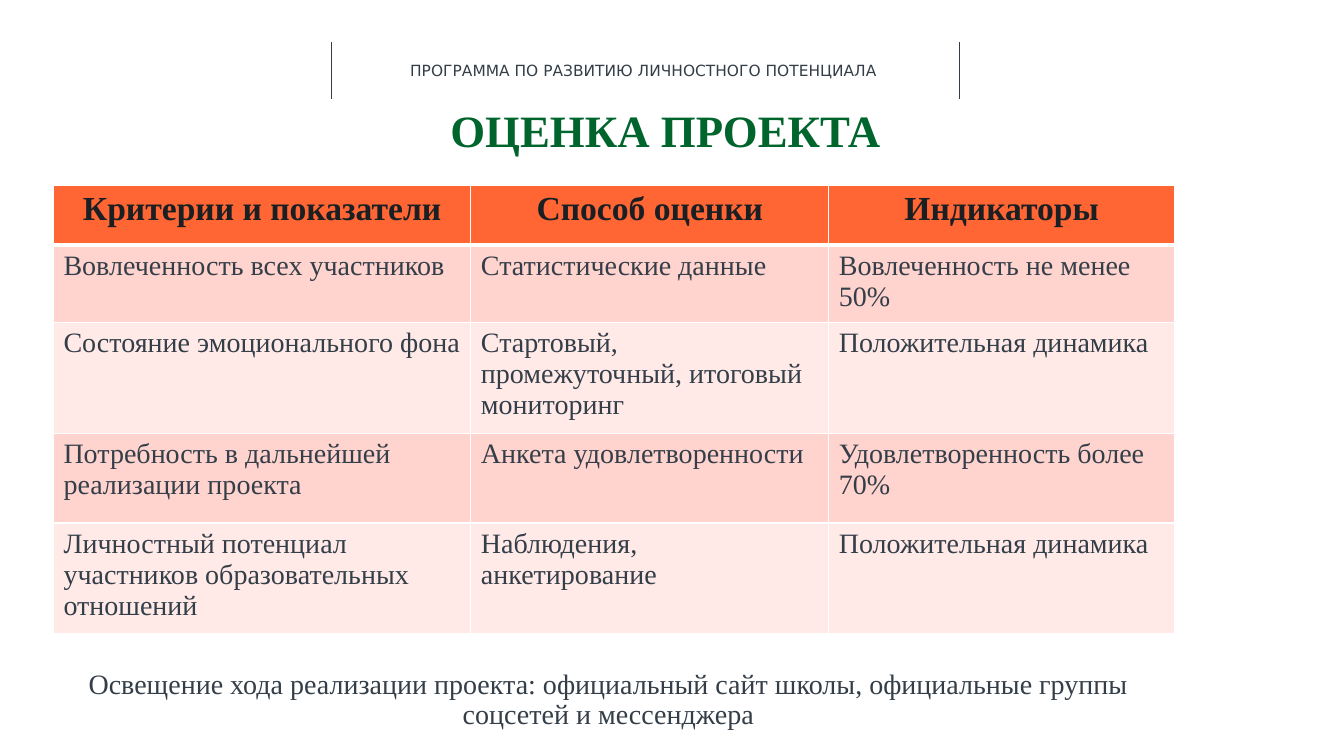
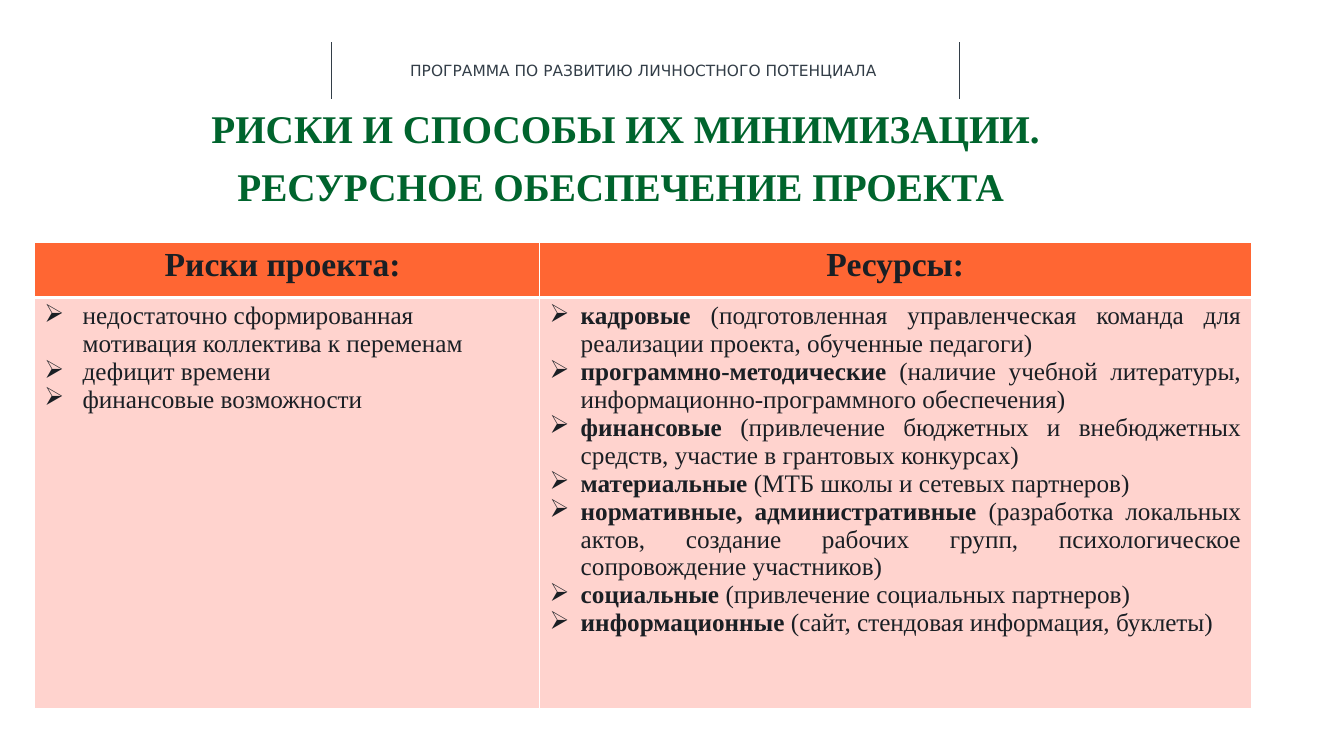
from dataclasses import dataclass
from lxml import etree
from pptx import Presentation
from pptx.dml.color import RGBColor
from pptx.enum.shapes import MSO_CONNECTOR
from pptx.enum.text import MSO_ANCHOR, MSO_AUTO_SIZE, PP_ALIGN
from pptx.oxml.ns import qn
from pptx.util import Inches, Pt

STRAIGHT = MSO_CONNECTOR.STRAIGHT
TOP = MSO_ANCHOR.TOP
NO_FIT = MSO_AUTO_SIZE.NONE
LEFT, CENTER, JUSTIFY = PP_ALIGN.LEFT, PP_ALIGN.CENTER, PP_ALIGN.JUSTIFY


@dataclass(frozen=True)
class Theme:
    font: str = "Times New Roman"
    band_font: str = "DejaVu Sans"
    green: str = "00642D"
    slate: str = "333E48"
    ink: str = "1A1F24"
    orange: str = "FF6633"
    rows: tuple = ("FFD3CE", "FFEAE8")
    white: str = "FFFFFF"
    band_size: int = 11
    head_size: int = 24
    body_size: int = 20
    list_size: int = 18


T = Theme()


def add_run(p, text, size, color, bold=False, font=T.font):
    r = p.add_run()
    r.text = text
    r.font.name, r.font.size, r.font.bold = font, Pt(size), bold
    r.font.color.rgb = RGBColor.from_string(color)


def style_cell(cell, fill, top, bottom):
    """Fill the cell and draw its white borders; widths are in points."""
    cell.fill.solid()
    cell.fill.fore_color.rgb = RGBColor.from_string(fill)
    tcPr = cell._tc.get_or_add_tcPr()
    for i, (side, width) in enumerate([("L", 1), ("R", 1), ("T", top), ("B", bottom)]):
        ln = etree.Element(qn(f"a:ln{side}"), w=str(Pt(width)))
        solid = etree.SubElement(ln, qn("a:solidFill"))
        etree.SubElement(solid, qn("a:srgbClr"), val=T.white)
        tcPr.insert(i, ln)


prs = Presentation()
prs.slide_width, prs.slide_height = Inches(13.33), Inches(7.5)
TITLE_AND_BODY, TITLE_ONLY = prs.slide_layouts[1], prs.slide_layouts[5]

# Content: a cell is a list of paragraphs, a paragraph a list of (text, bold)
criteria = [
    ("Вовлеченность всех участников", "Статистические данные",
     "Вовлеченность не менее 50%"),
    ("Состояние эмоционального фона", "Стартовый, промежуточный, итоговый мониторинг",
     "Положительная динамика"),
    ("Потребность в дальнейшей реализации проекта", "Анкета удовлетворенности",
     "Удовлетворенность более 70%"),
    ("Личностный потенциал участников образовательных отношений",
     "Наблюдения, анкетирование", "Положительная динамика"),
]
risks = [
    "недостаточно сформированная мотивация коллектива к переменам",
    "дефицит времени",
    "финансовые возможности",
]
resources = [
    ("кадровые", "(подготовленная управленческая команда для реализации проекта, "
     "обученные педагоги)"),
    ("программно-методические", "(наличие учебной литературы, "
     "информационно-программного обеспечения)"),
    ("финансовые", "(привлечение бюджетных и внебюджетных средств, "
     "участие в грантовых конкурсах)"),
    ("материальные", "(МТБ школы и сетевых партнеров)"),
    ("нормативные, административные", "(разработка локальных актов, "
     "создание рабочих групп, психологическое сопровождение участников)"),
    ("социальные", "(привлечение социальных партнеров)"),
    ("информационные", "(сайт, стендовая информация, буклеты)"),
]

slides = [
    dict(
        layout=TITLE_AND_BODY,
        title=["ОЦЕНКА ПРОЕКТА"], title_size=32, title_box=(0, 1.08, 13.2, 0.6),
        title_spacing=0.9,
        table_at=(0.53, 1.84), cols=[4.14, 3.55, 3.43], heights=[0.59, 0.75, 1.1, 0.89, 1.1],
        head=["Критерии и показатели", "Способ оценки", "Индикаторы"],
        rows=[[[[(text, False)]] for text in row] for row in criteria],
        size=T.body_size, color=T.slate, aligns=[LEFT] * 3, indents=[0] * 3,
        note="Освещение хода реализации проекта: официальный сайт школы, "
             "официальные группы соцсетей и мессенджера",
    ),
    dict(
        layout=TITLE_ONLY,
        title=["РИСКИ И СПОСОБЫ ИХ МИНИМИЗАЦИИ.", "РЕСУРСНОЕ ОБЕСПЕЧЕНИЕ ПРОЕКТА "],
        title_size=28, title_box=(0, 1.03, 12.41, 1.03), title_spacing=1.0,
        table_at=(0.34, 2.4), cols=[5.01, 7.06], heights=[0.55, 4.08],
        head=["Риски проекта: ", "Ресурсы:"],
        rows=[[[[(text, False)] for text in risks],
               [[(name, True), (" " + detail, False)] for name, detail in resources]]],
        size=T.list_size, color=T.ink, aligns=[LEFT, JUSTIFY], indents=[0.38, 0.31],
        note=None,
    ),
]

for data in slides:
    s = prs.slides.add_slide(data["layout"])

    # Programme name between two thin rules
    for x in (3.29, 9.52):
        rule = s.shapes.add_connector(STRAIGHT, Inches(x), Inches(0.42), Inches(x), Inches(0.98))
        rule.line.color.rgb = RGBColor.from_string(T.slate)
        rule.line.width = Pt(0.5)
        etree.SubElement(rule._element.spPr, qn("a:effectLst"))
    band = s.shapes.add_textbox(Inches(3.97), Inches(0.56), Inches(4.87), Inches(0.29))
    add_run(band.text_frame.paragraphs[0], "ПРОГРАММА ПО РАЗВИТИЮ ЛИЧНОСТНОГО ПОТЕНЦИАЛА",
            T.band_size, T.slate, font=T.band_font)

    # Title
    sp = s.shapes.title
    sp.left, sp.top, sp.width, sp.height = map(Inches, data["title_box"])
    tf = sp.text_frame
    tf.word_wrap, tf.auto_size, tf.vertical_anchor = True, NO_FIT, TOP
    tf.margin_left = tf.margin_right = tf.margin_top = tf.margin_bottom = 0
    for i, line in enumerate(data["title"]):
        p = tf.add_paragraph() if i else tf.paragraphs[0]
        p.alignment, p.line_spacing = CENTER, data["title_spacing"]
        p.space_before = Pt(8 if i else 0)
        add_run(p, line, data["title_size"], T.green, True)

    # Table
    left, top = data["table_at"]
    cols, heights = data["cols"], data["heights"]
    table = s.shapes.add_table(len(heights), len(cols), Inches(left), Inches(top),
                               Inches(sum(cols)), Inches(sum(heights))).table
    for column, width in zip(table.columns, cols):
        column.width = Inches(width)
    for row, height in zip(table.rows, heights):
        row.height = Inches(height)

    for c, text in enumerate(data["head"]):
        cell = table.cell(0, c)
        style_cell(cell, T.orange, 1, 3)
        p = cell.text_frame.paragraphs[0]
        p.alignment = CENTER
        add_run(p, text, T.head_size, T.ink, True)

    for r, row in enumerate(data["rows"]):
        for c, paragraphs in enumerate(row):
            cell = table.cell(r + 1, c)
            style_cell(cell, T.rows[r % 2], 1 if r else 3, 1)
            tf = cell.text_frame
            indent = Inches(data["indents"][c])
            for i, runs in enumerate(paragraphs):
                p = tf.add_paragraph() if i else tf.paragraphs[0]
                p.alignment = data["aligns"][c]
                if indent:
                    pPr = p._p.get_or_add_pPr()
                    pPr.set("marL", str(indent))
                    pPr.set("indent", str(-indent))
                    etree.SubElement(pPr, qn("a:buChar"), char="➢")
                for text, bold in runs:
                    add_run(p, text, data["size"], data["color"], bold)

    # Note under the table
    if data["note"]:
        sp = s.placeholders[1]
        sp.left, sp.top, sp.width, sp.height = map(Inches, (0.41, 6.58, 11.25, 0.75))
        tf = sp.text_frame
        tf.word_wrap, tf.auto_size, tf.vertical_anchor = True, NO_FIT, TOP
        tf.margin_left = tf.margin_right = 0
        tf.margin_top = tf.margin_bottom = Inches(0.07)
        p = tf.paragraphs[0]
        p.alignment, p.line_spacing, p.space_before = CENTER, 0.9, Pt(0)
        pPr = p._p.get_or_add_pPr()
        pPr.set("marL", "0")
        pPr.set("indent", "0")
        etree.SubElement(pPr, qn("a:buNone"))
        add_run(p, data["note"], T.body_size, T.slate)

prs.save("out.pptx")
